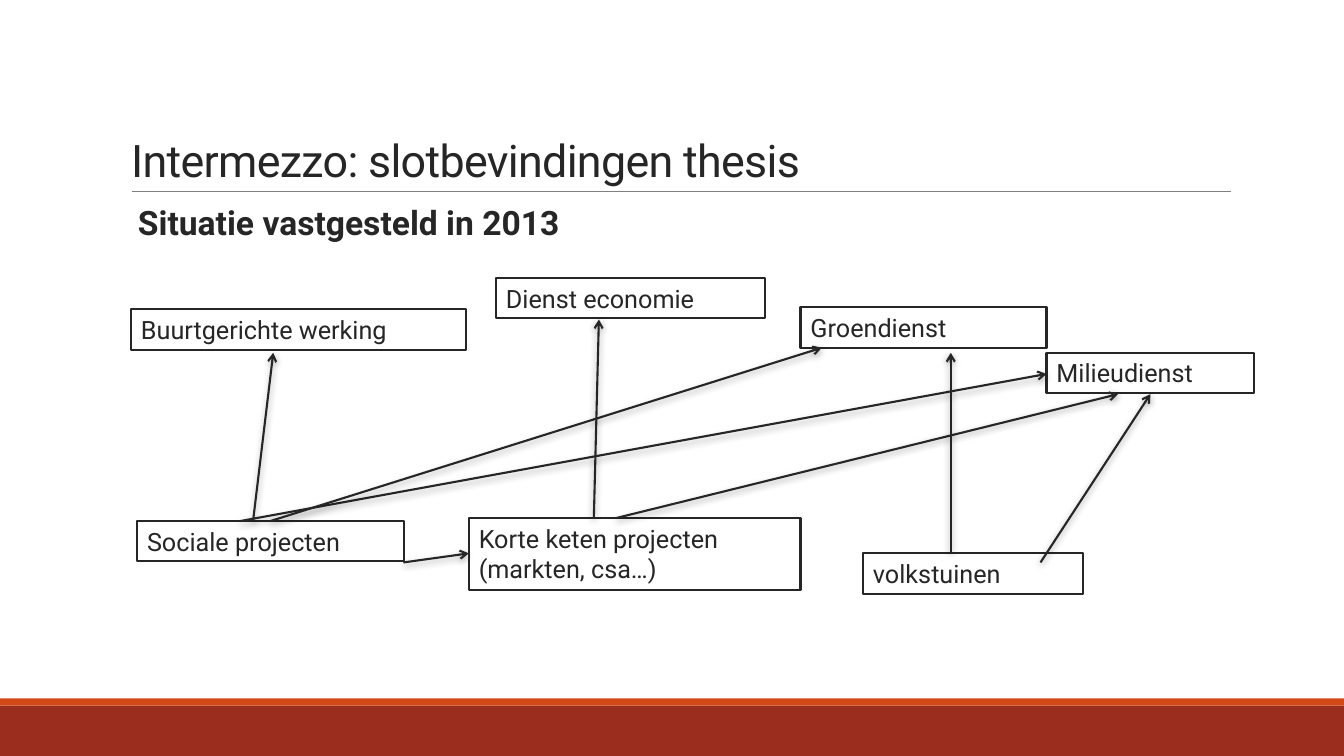
"""Build a slide on the links between city services and local food projects."""
from typing import Any, NamedTuple, Optional

import pptx
import pptx.dml.color
import pptx.enum.shapes
import pptx.enum.text
import pptx.oxml
import pptx.oxml.ns
import pptx.util

Inches = pptx.util.Inches
Pt = pptx.util.Pt
HUES = {"ink": "262626", "rule": "808080", "brick": "9B2D1F",
        "rust": "D34817", "shade": "000000"}
FONT = "Roboto"
WIDE, HIGH = 13.33, 7.5


class Box(NamedTuple):
    text: str
    left: float
    top: float
    width: float
    height: float = 0.4


class Glow(NamedTuple):
    alpha: int
    gap: float


class Link(NamedTuple):
    x1: float
    y1: float
    x2: float
    y2: float
    glow: Optional[Glow] = None
    hue: str = "ink"
    width: float = 1.5


class Band(NamedTuple):
    top: float
    height: float
    hue: str


SOFT, DEEP = Glow(35, 1.8), Glow(38, 1.6)
BANDS = [Band(7, 0.5, "brick"), Band(6.93, 0.07, "rust")]
RULE = Link(1.31, 1.9, 12.21, 1.9, None, "rule", 0.5)
BOXES = [
    Box("Sociale projecten", 1.36, 5.17, 2.65),
    Box("Buurtgerichte werking", 1.3, 3.07, 3.32),
    Box("Dienst economie", 4.92, 2.76, 2.67),
    Box("Groendienst", 7.94, 3.05, 2.44),
    Box("Milieudienst", 10.38, 3.5, 2.06),
    Box("Korte keten projecten (markten, csa…)", 4.65, 5.14, 3.29, 0.71),
    Box("volkstuinen", 8.56, 5.49, 2.18),
]
LINKS = [
    Link(2.51, 5.17, 2.71, 3.5, SOFT),
    Link(2.38, 5.17, 10.38, 3.71, SOFT),
    Link(2.68, 5.17, 8.15, 3.45, SOFT),
    Link(5.89, 5.14, 5.94, 3.17, DEEP),
    Link(6.11, 5.14, 11.09, 3.91, DEEP),
    Link(9.43, 5.48, 9.43, 3.5, DEEP),
    Link(10.32, 5.58, 11.41, 3.91, DEEP),
    Link(4, 5.58, 4.65, 5.49, SOFT),
]


def tint(name: str) -> pptx.dml.color.RGBColor:
    return pptx.dml.color.RGBColor.from_string(HUES[name])


def node(body: str) -> Any:
    start, rest = body.split(" ", 1) if " " in body else (body[:-2], "/>")
    return pptx.oxml.parse_xml(f"{start} {pptx.oxml.ns.nsdecls('a')} {rest}")


def write(shape: Any, text: str, size: int, bold: bool = False) -> Any:
    frame = shape.text_frame
    frame.word_wrap = True
    frame.auto_size = pptx.enum.text.MSO_AUTO_SIZE.NONE
    frame.vertical_anchor = pptx.enum.text.MSO_ANCHOR.TOP
    line = frame.paragraphs[0]
    line.alignment = pptx.enum.text.PP_ALIGN.LEFT
    run = line.add_run()
    run.text = text
    run.font.name = FONT
    run.font.size = Pt(size)
    run.font.bold = bold
    run.font.color.rgb = tint("ink")
    return run


def draw_head(slide: Any) -> None:
    title = slide.shapes.title
    title.left, title.top = Inches(1.2), Inches(0.31)
    title.width, title.height = Inches(11), Inches(1.59)
    run = write(title, "Intermezzo: slotbevindingen thesis", 32)
    run.font._element.set("spc", "-50")
    title.text_frame.vertical_anchor = pptx.enum.text.MSO_ANCHOR.BOTTOM
    title.text_frame.paragraphs[0].line_spacing = 0.85


def add_rect(slide: Any, left: float, top: float, width: float,
             height: float) -> Any:
    rect = slide.shapes.add_shape(
        pptx.enum.shapes.MSO_SHAPE.RECTANGLE,
        Inches(left), Inches(top), Inches(width), Inches(height))
    rect.shadow.inherit = False
    return rect


def draw_band(slide: Any, band: Band) -> None:
    rect = add_rect(slide, 0, band.top, WIDE, band.height)
    rect.fill.solid()
    rect.fill.fore_color.rgb = tint(band.hue)
    rect.line.fill.background()


def draw_box(slide: Any, box: Box) -> None:
    rect = add_rect(slide, box.left, box.top, box.width, box.height)
    rect.fill.background()
    rect.line.color.rgb = tint("ink")
    rect.line.width = Pt(1.5)
    write(rect, box.text, 18)


def draw_link(slide: Any, link: Link) -> None:
    wire = slide.shapes.add_connector(
        pptx.enum.shapes.MSO_CONNECTOR.STRAIGHT,
        Inches(link.x1), Inches(link.y1), Inches(link.x2), Inches(link.y2))
    wire.line.color.rgb = tint(link.hue)
    wire.line.width = Pt(link.width)
    effect = node("<a:effectLst/>")
    if link.glow:
        wire.line._get_or_add_ln().append(node('<a:tailEnd type="arrow"/>'))
        effect.append(node(
            f'<a:outerShdw blurRad="{Pt(5)}" dist="{Pt(link.glow.gap)}" '
            f'dir="5400000" rotWithShape="0"><a:srgbClr val="{HUES["shade"]}">'
            f'<a:alpha val="{link.glow.alpha * 1000}"/></a:srgbClr>'
            '</a:outerShdw>'))
    wire._element.spPr.append(effect)


def main() -> None:
    deck = pptx.Presentation()
    deck.slide_width, deck.slide_height = Inches(WIDE), Inches(HIGH)
    slide = deck.slides.add_slide(deck.slide_layouts[5])
    for band in BANDS:
        draw_band(slide, band)
    draw_head(slide)
    for box in BOXES:
        draw_box(slide, box)
    for link in [RULE, *LINKS]:
        draw_link(slide, link)
    note = slide.shapes.add_textbox(
        Inches(1.27), Inches(1.95), Inches(6.29), Inches(0.5))
    write(note, "Situatie vastgesteld in 2013", 24, True)
    deck.save("out.pptx")


if __name__ == "__main__":
    main()
